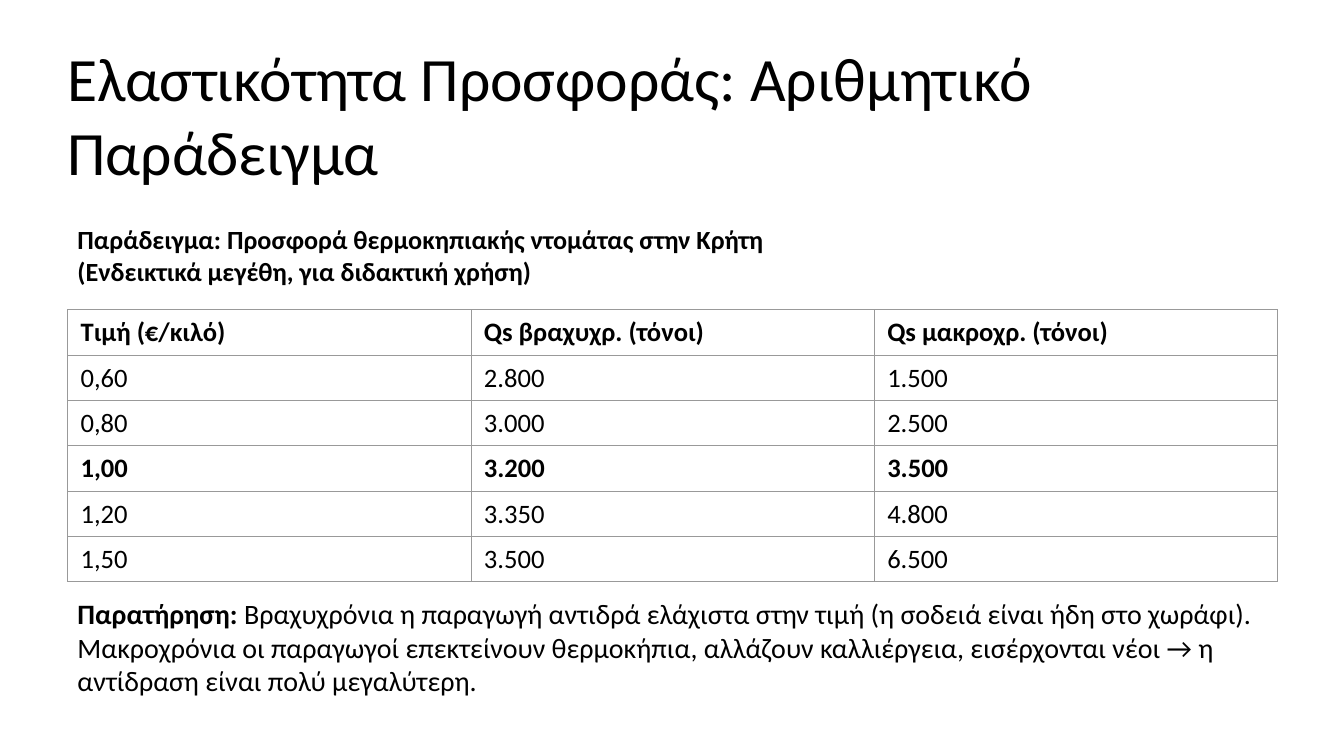
from lxml import etree
from pptx import Presentation
from pptx.dml.color import RGBColor
from pptx.enum.text import MSO_ANCHOR
from pptx.oxml.ns import qn
from pptx.util import Inches, Pt

BLACK = RGBColor(0x00, 0x00, 0x00)
GRID_GREY = RGBColor(0x99, 0x99, 0x99)
LEFT, WIDTH = Inches(0.67), Inches(12)
ROW_HEIGHT = Inches(0.45)

SUPPLY_ROWS = [
    ("Τιμή (€/κιλό)", "Qs βραχυχρ. (τόνοι)", "Qs μακροχρ. (τόνοι)"),
    ("0,60", "2.800", "1.500"),
    ("0,80", "3.000", "2.500"),
    ("1,00", "3.200", "3.500"),
    ("1,20", "3.350", "4.800"),
    ("1,50", "3.500", "6.500"),
]
BOLD_ROWS = {0, 3}


class SlideBuilder:
    font_name = "Calibri"

    def __init__(self, slide):
        self.slide = slide

    def style(self, paragraph, size, bold=None):
        font = paragraph.font
        font.name, font.size, font.bold = self.font_name, Pt(size), bold
        font.color.rgb = BLACK

    def text(self, top, height, paragraphs, size, anchor=MSO_ANCHOR.TOP, inset=None):
        """Each paragraph is a list of (text, bold) runs."""
        shape = self.slide.shapes.add_textbox(LEFT, top, WIDTH, height)
        frame = shape.text_frame
        frame.word_wrap = True
        frame.vertical_anchor = anchor
        if inset is not None:
            frame.margin_left = frame.margin_right = inset
            frame.margin_top = frame.margin_bottom = inset
        for index, runs in enumerate(paragraphs):
            paragraph = frame.add_paragraph() if index else frame.paragraphs[0]
            same = len({bold for _, bold in runs}) == 1
            self.style(paragraph, size, runs[0][1] if same else None)
            for content, bold in runs:
                run = paragraph.add_run()
                run.text = content
                if not same:
                    run.font.bold = bold

    def border(self, cell):
        properties = cell._tc.get_or_add_tcPr()
        for position, side in enumerate(("lnL", "lnR", "lnT", "lnB")):
            line = etree.Element(qn(f"a:{side}"), w=str(Pt(0.5)))
            fill = etree.SubElement(line, qn("a:solidFill"))
            etree.SubElement(fill, qn("a:srgbClr"), val=str(GRID_GREY))
            properties.insert(position, line)

    def table(self, top, rows, bold_rows, size):
        shape = self.slide.shapes.add_table(
            len(rows), len(rows[0]), LEFT, top, WIDTH, ROW_HEIGHT * len(rows))
        table = shape.table
        table.horz_banding = False
        for row_index, values in enumerate(rows):
            table.rows[row_index].height = ROW_HEIGHT
            for column_index, value in enumerate(values):
                cell = table.cell(row_index, column_index)
                cell.text = value
                cell.margin_left = cell.margin_right = Inches(0.13)
                cell.margin_top, cell.margin_bottom = Inches(0.07), Inches(0.06)
                cell.fill.background()
                self.border(cell)
                self.style(cell.text_frame.paragraphs[0], size, row_index in bold_rows)


def main():
    presentation = Presentation()
    presentation.slide_width, presentation.slide_height = Inches(13.33), Inches(7.5)
    builder = SlideBuilder(presentation.slides.add_slide(presentation.slide_layouts[6]))

    # Title
    builder.text(Inches(0.4), Inches(1.6),
                 [[("Ελαστικότητα Προσφοράς: Αριθμητικό Παράδειγμα", False)]],
                 44, inset=0)

    # Table heading
    builder.text(Inches(2.13), Inches(0.8), [
        [("Παράδειγμα: Προσφορά θερμοκηπιακής ντομάτας στην Κρήτη", True)],
        [("(Ενδεικτικά μεγέθη, για διδακτική χρήση)", True)],
    ], 18.7, anchor=MSO_ANCHOR.MIDDLE)

    # Supply table
    builder.table(Inches(3.07), SUPPLY_ROWS, BOLD_ROWS, 19)

    # Observation
    builder.text(Inches(5.87), Inches(1.33), [[
        ("Παρατήρηση: ", True),
        ("Βραχυχρόνια η παραγωγή αντιδρά ελάχιστα στην τιμή (η σοδειά είναι ήδη "
         "στο χωράφι). Μακροχρόνια οι παραγωγοί επεκτείνουν θερμοκήπια, αλλάζουν "
         "καλλιέργεια, εισέρχονται νέοι → η αντίδραση είναι πολύ μεγαλύτερη.", False),
    ]], 20)

    presentation.save("out.pptx")


if __name__ == "__main__":
    main()
